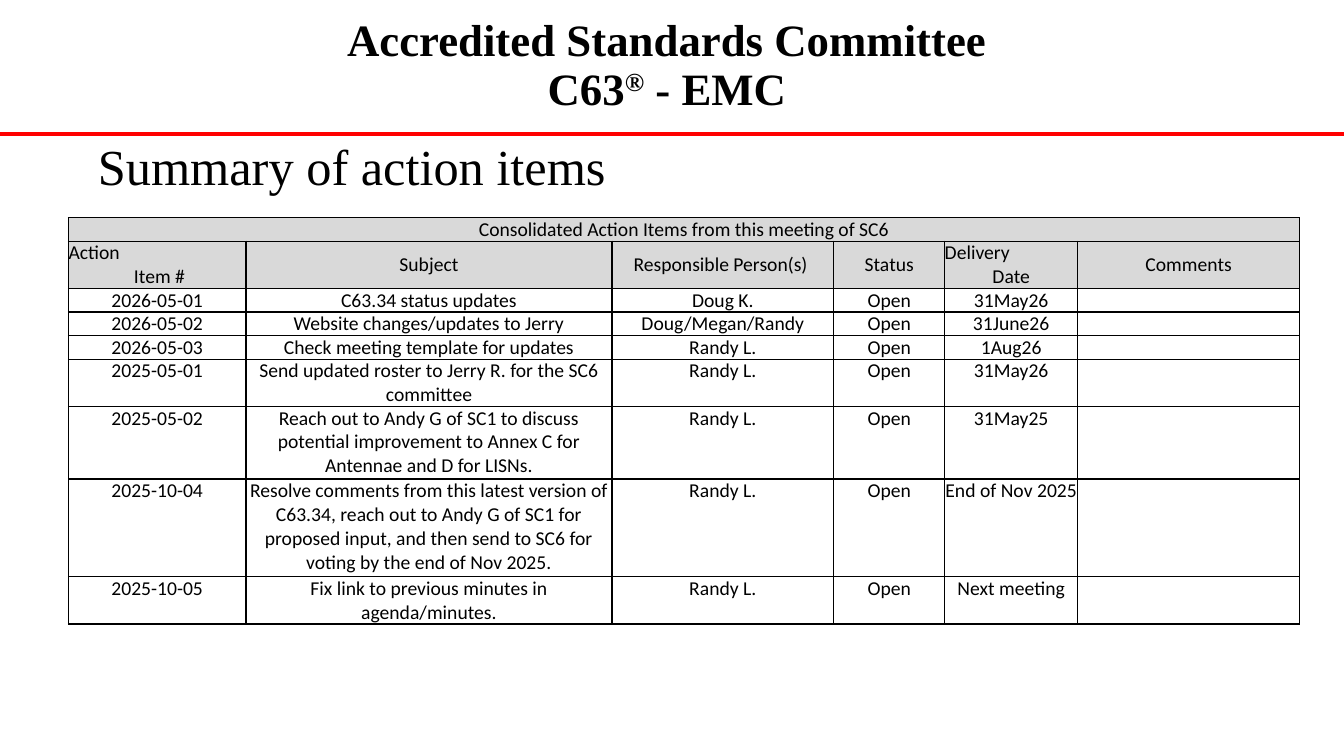
from pptx import Presentation
from pptx.dml.color import RGBColor
from pptx.enum.shapes import MSO_CONNECTOR
from pptx.enum.text import MSO_ANCHOR, MSO_AUTO_SIZE, PP_ALIGN
from pptx.oxml import parse_xml
from pptx.oxml.ns import nsdecls
from pptx.util import Inches, Pt

LEFT, CENTER = PP_ALIGN.LEFT, PP_ALIGN.CENTER
TOP, MIDDLE = MSO_ANCHOR.TOP, MSO_ANCHOR.MIDDLE
STRAIGHT = MSO_CONNECTOR.STRAIGHT
NO_FIT = MSO_AUTO_SIZE.NONE
COLORS = {"text": "000000", "rule": "FF0000", "header": "D9D9D9"}
SERIF, SANS = "Times New Roman", "Calibri"
CELL_SIZE = 14


def set_font(p, name, size, align, bold=False):
    p.alignment = align
    p.font.name, p.font.size, p.font.bold = name, Pt(size), bold
    p.font.color.rgb = RGBColor.from_string(COLORS["text"])


def add_borders(cell):
    tcPr = cell._tc.get_or_add_tcPr()
    for i, side in enumerate(("lnL", "lnR", "lnT", "lnB")):
        tcPr.insert(i, parse_xml(
            f'<a:{side} {nsdecls("a")} w="{Pt(1)}"><a:solidFill>'
            f'<a:srgbClr val="{COLORS["text"]}"/></a:solidFill></a:{side}>'))


prs = Presentation()
prs.slide_width, prs.slide_height = Inches(13.33), Inches(7.5)
s = prs.slides.add_slide(prs.slide_layouts[5])

# Committee banner
banner = s.shapes.add_textbox(Inches(2.76), Inches(0.13), Inches(7.82), Inches(1.06))
tf = banner.text_frame
tf.word_wrap = True
tf.margin_left = tf.margin_right = tf.margin_top = tf.margin_bottom = Inches(0.05)
p = tf.paragraphs[0]
p.line_spacing = 0.9
set_font(p, SERIF, 32, CENTER, True)
p.add_run().text = "Accredited Standards Committee "
p.add_line_break()
p.add_run().text = "C63"
r = p.add_run()
r.text = "®"
r.font._element.set("baseline", "30000")
p.add_run().text = " - EMC "

# Red rule across the slide
rule = s.shapes.add_connector(STRAIGHT, 0, Inches(1.33), prs.slide_width, Inches(1.33))
rule.line.color.rgb = RGBColor.from_string(COLORS["rule"])
rule.line.width = Pt(2.25)
rule._element.spPr.append(parse_xml(f'<a:effectLst {nsdecls("a")}/>'))

# Title
title = s.shapes.title
title.left, title.top = Inches(0.92), Inches(1.34)
title.width, title.height = Inches(11.5), Inches(0.67)
tf = title.text_frame
tf.text = "Summary of action items"
tf.auto_size, tf.vertical_anchor, tf.word_wrap = NO_FIT, MIDDLE, True
tf.margin_left = tf.margin_right = tf.margin_top = tf.margin_bottom = Inches(0.05)
tf.paragraphs[0].line_spacing = 0.9
set_font(tf.paragraphs[0], SERIF, 36, LEFT)

# Action items: heading, column names, then one row per item
HEADER_ROWS = 2
rows = [
    ("Consolidated Action Items from this meeting of SC6", "", "", "", "", ""),
    ("Action\n Item #", "Subject", "Responsible Person(s) ", "Status",
     "Delivery\nDate", "Comments"),
    ("2026-05-01", "C63.34 status updates", "Doug K.", "Open", "31May26", ""),
    ("2026-05-02", "Website changes/updates to Jerry", "Doug/Megan/Randy", "Open",
     "31June26", ""),
    ("2026-05-03", "Check meeting template for updates", "Randy L.", "Open",
     "1Aug26", ""),
    ("2025-05-01", "Send updated roster to Jerry R. for the SC6 committee",
     "Randy L.", "Open", "31May26", ""),
    ("2025-05-02", "Reach out to Andy G of SC1 to discuss potential improvement "
     "to Annex C for Antennae and D for LISNs.", "Randy L.", "Open", "31May25", ""),
    ("2025-10-04", "Resolve comments from this latest version of C63.34, reach out "
     "to Andy G of SC1 for proposed input, and then send to SC6 for voting by the "
     "end of Nov 2025.", "Randy L.", "Open", "End of Nov 2025", ""),
    ("2025-10-05", "Fix link to previous minutes in agenda/minutes.", "Randy L.",
     "Open", "Next meeting", ""),
]
col_widths = [1.76, 3.63, 2.2, 1.1, 1.32, 2.2]
row_heights = [0.22, 0.42, 0.22, 0.22, 0.22, 0.47, 0.72, 0.97, 0.47]

table = s.shapes.add_table(len(rows), len(col_widths), Inches(0.68), Inches(2.16),
                           Inches(sum(col_widths)), Inches(sum(row_heights))).table
table.first_row = table.horz_banding = False
for col, width in zip(table.columns, col_widths):
    col.width = Inches(width)
for row, height in zip(table.rows, row_heights):
    row.height = Inches(height)

for i, texts in enumerate(rows):
    is_header = i < HEADER_ROWS
    for j, text in enumerate(texts):
        cell = table.cell(i, j)
        cell.margin_left = cell.margin_right = cell.margin_top = cell.margin_bottom = 0
        cell.vertical_anchor = MIDDLE if is_header else TOP
        if is_header:
            cell.fill.solid()
            cell.fill.fore_color.rgb = RGBColor.from_string(COLORS["header"])
        else:
            cell.fill.background()
        add_borders(cell)
        cell.text = text
        paragraphs = cell.text_frame.paragraphs
        for p in paragraphs:
            set_font(p, SANS, CELL_SIZE, CENTER)
            if not text:
                p._p.get_or_add_endParaRPr().set("sz", str(CELL_SIZE * 100))
        # The first line of a two-line column name sits at the left
        if len(paragraphs) > 1:
            paragraphs[0].alignment = LEFT
table.cell(0, 0).merge(table.cell(0, len(col_widths) - 1))

prs.save("out.pptx")
